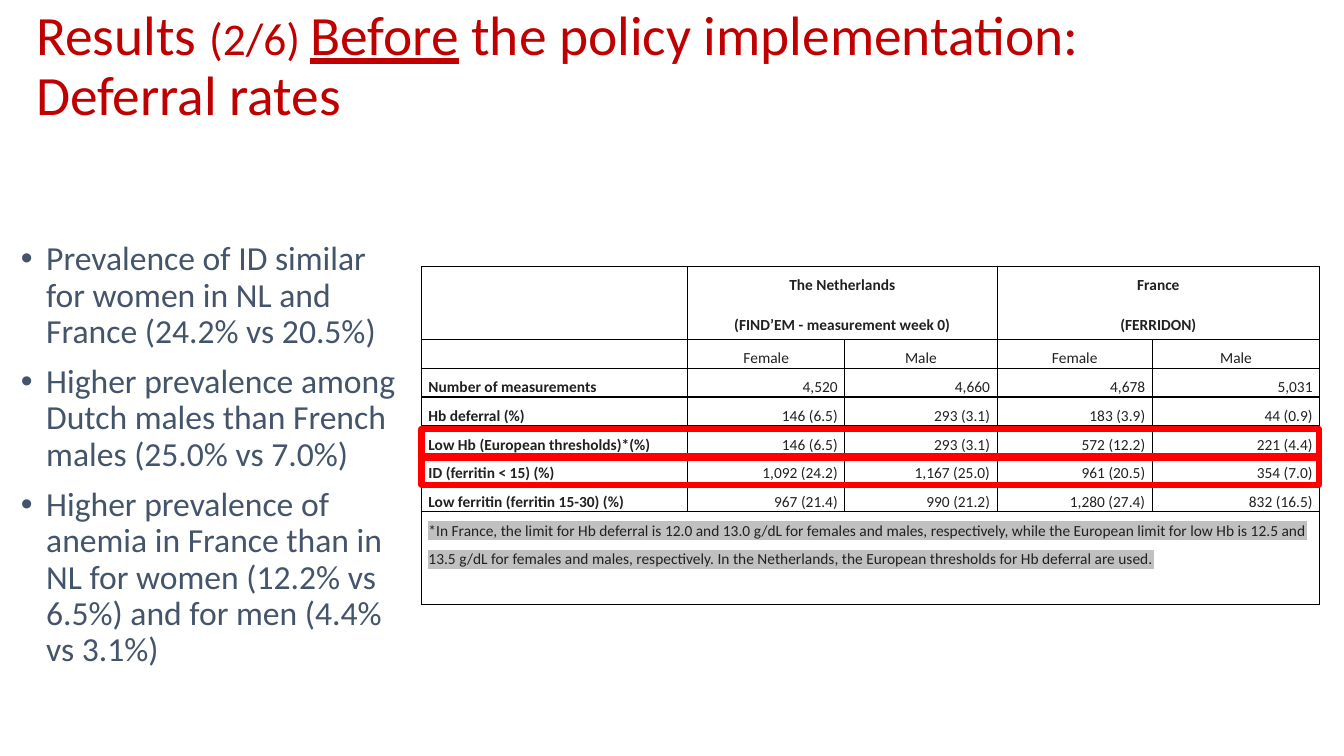
from dataclasses import dataclass

from lxml.etree import SubElement
from pptx import Presentation
from pptx.dml.color import RGBColor
from pptx.enum.shapes import MSO_SHAPE as Shape
from pptx.enum.text import MSO_ANCHOR as Anchor, PP_ALIGN as Align
from pptx.oxml import parse_xml
from pptx.oxml.ns import nsdecls, qn
from pptx.util import Inches, Pt


@dataclass(frozen=True)
class Theme:
    font: str = "Calibri"
    title: str = "C00000"
    bullet: str = "44546A"
    cell: str = "212121"
    border: str = "000000"
    marker: str = "FF0000"
    highlight: str = "C0C0C0"
    title_size: float = 39.6
    counter_size: float = 32.4
    bullet_size: float = 24
    cell_size: float = 11


THEME = Theme()

TITLE = [
    ("Results ", {}),
    ("(2/6) ", {"size": THEME.counter_size}),
    ("Before", {"underline": True}),
    (" the policy implementation: Deferral rates", {}),
]
FINDINGS = [
    "Prevalence of ID similar for women in NL and France (24.2% vs 20.5%)",
    "Higher prevalence among Dutch males than French males (25.0% vs 7.0%)",
    "Higher prevalence of anemia in France than in NL for women "
    "(12.2% vs 6.5%) and for men (4.4% vs 3.1%)",
]
COUNTRIES = [
    ("The Netherlands", "(FIND’EM - measurement week 0)"),
    ("France", "(FERRIDON)"),
]
SEXES = ["", "Female", "Male", "Female", "Male"]
MEASURES = [
    ("Number of measurements", "4,520", "4,660", "4,678", "5,031"),
    ("Hb deferral (%)", "146 (6.5)", "293 (3.1)", "183 (3.9)", "44 (0.9)"),
    ("Low Hb (European thresholds)*(%)", "146 (6.5)", "293 (3.1)", "572 (12.2)", "221 (4.4)"),
    ("ID (ferritin < 15) (%)", "1,092 (24.2)", "1,167 (25.0)", "961 (20.5)", "354 (7.0)"),
    ("Low ferritin (ferritin 15-30) (%)", "967 (21.4)", "990 (21.2)", "1,280 (27.4)", "832 (16.5)"),
]
FOOTNOTE = (
    "*In France, the limit for Hb deferral is 12.0 and 13.0 g/dL for females and males, "
    "respectively, while the European limit for low Hb is 12.5 and 13.5 g/dL for females and "
    "males, respectively. In the Netherlands, the European thresholds for Hb deferral are used."
)

TABLE_LEFT, TABLE_TOP, TABLE_WIDTH, TABLE_HEIGHT = 4.18, 2.64, 8.9, 3.36
COLUMNS = [2.64, 1.56, 1.51, 1.54, 1.66]
HEADER_ROW, FOOT_ROW = 0.73, 0.92
BODY_ROW = (TABLE_HEIGHT - HEADER_ROW - FOOT_ROW) / (len(MEASURES) + 1)
ROWS = [HEADER_ROW] + [BODY_ROW] * (len(MEASURES) + 1) + [FOOT_ROW]
MARKED_ROWS = [5, 4]
MARKER_TOP, MARKER_HEIGHT = 0.03, 0.27


def write(frame, paragraphs, *, size, color, bold=False, align=Align.LEFT,
          spacing=0.9, before=0, after=0, bullet=False, highlight=None):
    """Fill a text frame; each paragraph is a list of (text, overrides) runs."""
    frame.word_wrap = True
    for index, runs in enumerate(paragraphs):
        paragraph = frame.paragraphs[0] if index == 0 else frame.add_paragraph()
        paragraph.alignment = align
        paragraph.line_spacing = spacing
        paragraph.space_before, paragraph.space_after = Pt(before), Pt(after)
        if bullet:
            properties = paragraph._p.get_or_add_pPr()
            properties.set("marL", str(Inches(0.25)))
            properties.set("indent", str(-Inches(0.25)))
            SubElement(properties, qn("a:buFont")).set("typeface", "Arial")
            SubElement(properties, qn("a:buChar")).set("char", "•")
        for text, overrides in runs:
            run = paragraph.add_run()
            run.text = text
            font = run.font
            font.name, font.bold = THEME.font, bold
            font.size = Pt(overrides.get("size", size))
            font.underline = overrides.get("underline", False)
            font.color.rgb = RGBColor.from_string(color)
            if highlight:
                font.fill._xPr.find(qn("a:solidFill")).addnext(parse_xml(
                    f'<a:highlight {nsdecls("a")}><a:srgbClr val="{highlight}"/></a:highlight>'))
        if not runs:
            paragraph._p.get_or_add_endParaRPr().set("sz", str(int(size * 100)))


def plain(text):
    return [(text, {})] if text else []


def write_cell(cell, *lines, **style):
    write(cell.text_frame, [plain(line) for line in lines], size=THEME.cell_size,
          color=THEME.cell, spacing=1.5 if any(lines) else 1, after=8, **style)


def outline_cell(cell):
    cell.margin_left = cell.margin_right = Inches(0.07)
    cell.margin_top = cell.margin_bottom = 0
    properties = cell._tc.get_or_add_tcPr()
    for side in ("lnL", "lnR", "lnT", "lnB"):
        properties.append(parse_xml(
            f'<a:{side} {nsdecls("a")} w="{Pt(1)}"><a:solidFill>'
            f'<a:srgbClr val="{THEME.border}"/></a:solidFill></a:{side}>'))
    cell.fill.background()


def add_text(slide, box, paragraphs, **style):
    frame = slide.shapes.add_textbox(*map(Inches, box)).text_frame
    write(frame, paragraphs, **style)
    return frame


def add_results(slide):
    table = slide.shapes.add_table(
        len(ROWS), len(COLUMNS),
        *map(Inches, (TABLE_LEFT, TABLE_TOP, TABLE_WIDTH, TABLE_HEIGHT))).table
    table.first_row = table.horz_banding = False
    for column, width in zip(table.columns, COLUMNS):
        column.width = Inches(width)
    for row, height in zip(table.rows, ROWS):
        row.height = Inches(height)
    for cell in table.iter_cells():
        outline_cell(cell)

    write_cell(table.cell(0, 0), "")
    for index, lines in enumerate(COUNTRIES):
        first = 1 + 2 * index
        table.cell(0, first).merge(table.cell(0, first + 1))
        write_cell(table.cell(0, first), *lines, bold=True, align=Align.CENTER)
    for column, sex in enumerate(SEXES):
        write_cell(table.cell(1, column), sex, align=Align.CENTER)
    for row, (measure, *values) in enumerate(MEASURES, start=2):
        write_cell(table.cell(row, 0), measure, bold=True)
        for column, value in enumerate(values, start=1):
            write_cell(table.cell(row, column), value, align=Align.RIGHT)
    last = len(ROWS) - 1
    table.cell(last, 0).merge(table.cell(last, len(COLUMNS) - 1))
    write_cell(table.cell(last, 0), FOOTNOTE, highlight=THEME.highlight)


def add_marker(slide, row):
    top = TABLE_TOP + sum(ROWS[:row]) + MARKER_TOP
    marker = slide.shapes.add_shape(
        Shape.RECTANGLE, *map(Inches, (TABLE_LEFT, top, TABLE_WIDTH, MARKER_HEIGHT)))
    marker.shadow.inherit = False
    marker.fill.background()
    marker.line.color.rgb = RGBColor.from_string(THEME.marker)
    marker.line.width = Pt(4.5)


def main():
    deck = Presentation()
    deck.slide_width, deck.slide_height = Inches(13.33), Inches(7.5)
    slide = deck.slides.add_slide(deck.slide_layouts[6])

    title = add_text(slide, (0.26, 0.44, 11.5, 1.06), [TITLE],
                     size=THEME.title_size, color=THEME.title)
    title.vertical_anchor = Anchor.MIDDLE
    title.margin_bottom = Inches(0.65)
    add_text(slide, (0.11, 2.35, 3.95, 4.36), [plain(finding) for finding in FINDINGS],
             size=THEME.bullet_size, color=THEME.bullet, before=10, bullet=True)
    add_results(slide)
    for row in MARKED_ROWS:
        add_marker(slide, row)
    deck.save("out.pptx")


if __name__ == "__main__":
    main()
